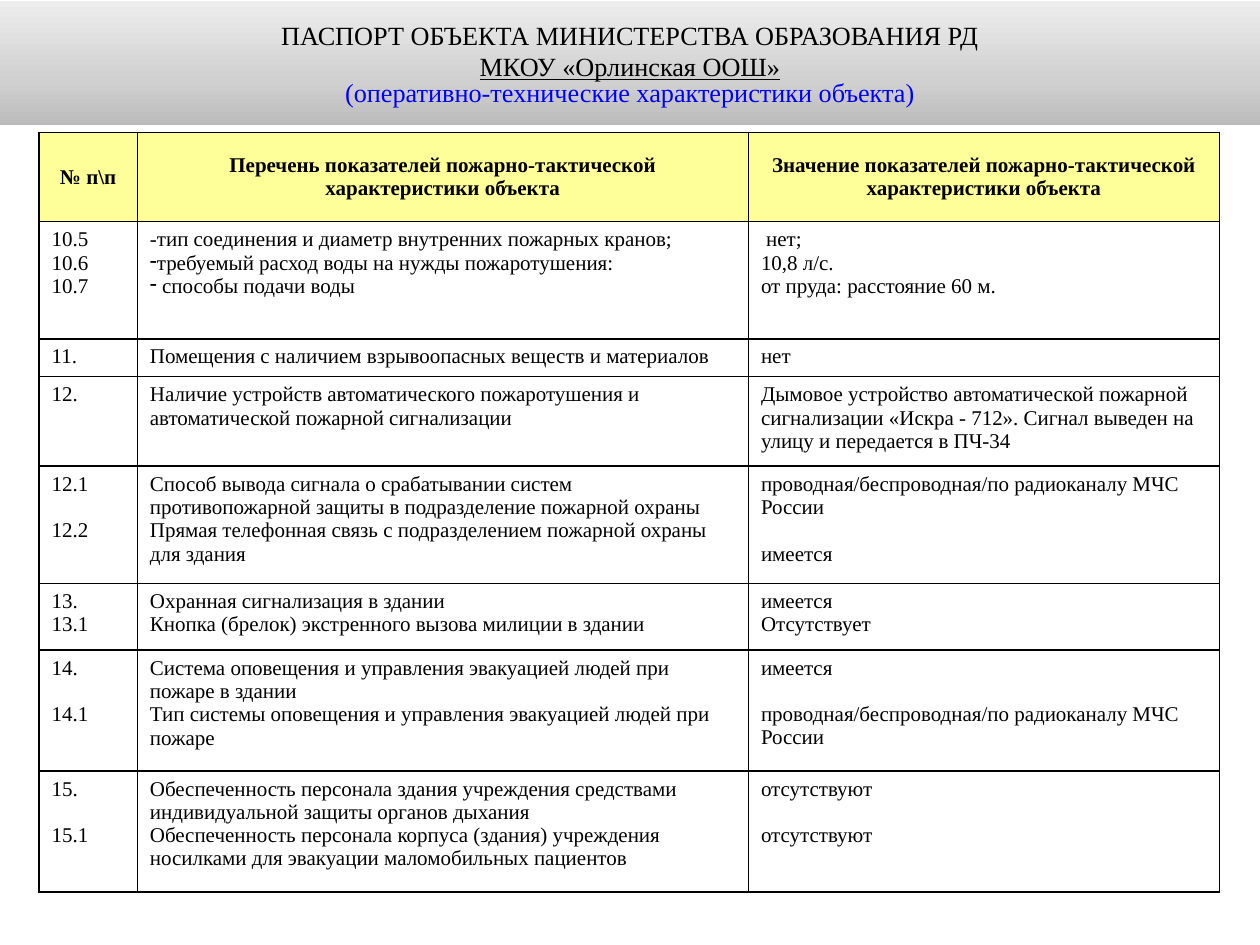
"""Build a slide with the fire-safety passport table of a school."""
from copy import deepcopy
from dataclasses import dataclass

from lxml import etree
from pptx import Presentation
from pptx.dml.color import RGBColor
from pptx.enum.shapes import MSO_SHAPE
from pptx.enum.text import MSO_ANCHOR, PP_ALIGN
from pptx.oxml.ns import qn
from pptx.util import Inches, Pt

RECT = MSO_SHAPE.RECTANGLE
MIDDLE, TOP = MSO_ANCHOR.MIDDLE, MSO_ANCHOR.TOP
CENTER, LEFT = PP_ALIGN.CENTER, PP_ALIGN.LEFT


@dataclass(frozen=True)
class Theme:
    font: str = "Times New Roman"
    title_size: float = 15
    table_size: float = 12
    line_gap: float = 13.3
    border_width: float = 1
    text: str = "000000"
    accent: str = "0000FF"
    header: str = "FFFF99"
    body: str = "FFFFFF"
    banner: tuple = ((0, "BCBCBC"), (0.35, "D0D0D0"), (1, "EDEDED"))


@dataclass(frozen=True)
class Line:
    text: str
    bullet: bool = False
    gap: bool = False


THEME = Theme()
COL_WIDTHS = (0.78, 4.85, 3.74)
ROW_HEIGHTS = (0.71, 0.93, 0.3, 0.71, 0.93, 0.53, 0.96, 0.96)
HEADER = (
    "№ п\\п",
    "Перечень показателей пожарно-тактической характеристики объекта",
    "Значение показателей пожарно-тактической характеристики объекта",
)
ROWS = (
    (("10.5", "10.6", "10.7"),
     ("-тип соединения и диаметр внутренних пожарных кранов;",
      Line("требуемый расход воды на нужды пожаротушения:", bullet=True),
      Line(" способы подачи воды", bullet=True)),
     (" нет;", "10,8 л/с.", "от пруда: расстояние 60 м.")),
    (("11.",),
     ("Помещения с наличием взрывоопасных веществ и материалов",),
     ("нет",)),
    (("12.",),
     ("Наличие устройств автоматического пожаротушения и автоматической пожарной сигнализации",),
     ("Дымовое устройство автоматической пожарной сигнализации «Искра - 712». "
      "Сигнал выведен на улицу и передается в ПЧ-34",)),
    (("12.1", Line("12.2", gap=True)),
     ("Способ вывода сигнала о срабатывании систем противопожарной защиты "
      "в подразделение пожарной охраны",
      "Прямая телефонная связь с подразделением пожарной охраны для здания"),
     ("проводная/беспроводная/по радиоканалу МЧС России", Line("имеется", gap=True))),
    (("13.", "13.1"),
     ("Охранная сигнализация в здании",
      "Кнопка (брелок) экстренного вызова милиции в здании"),
     ("имеется", "Отсутствует")),
    (("14.", Line("14.1", gap=True)),
     ("Система оповещения и управления эвакуацией людей при пожаре в здании",
      "Тип системы оповещения и управления эвакуацией людей при пожаре"),
     ("имеется", Line("проводная/беспроводная/по радиоканалу МЧС России", gap=True))),
    (("15.", Line("15.1", gap=True)),
     ("Обеспеченность персонала здания учреждения средствами индивидуальной защиты органов дыхания",
      "Обеспеченность персонала корпуса (здания) учреждения носилками "
      "для эвакуации маломобильных пациентов"),
     ("отсутствуют", Line("отсутствуют", gap=True))),
)


def rgb(value):
    """Return a colour from its hex value."""
    return RGBColor.from_string(value)


def add_paragraph(tf, index, text, size, align, color=THEME.text):
    """Write one styled paragraph into a text frame."""
    p = tf.paragraphs[0] if index == 0 else tf.add_paragraph()
    p.text = text
    p.alignment = align
    p.font.name = THEME.font
    p.font.size = Pt(size)
    p.font.color.rgb = rgb(color)
    return p


def add_bullet(p):
    """Give a paragraph a dash bullet."""
    etree.SubElement(p._p.get_or_add_pPr(), qn("a:buChar")).set("char", "-")


def set_borders(cell):
    """Draw all four borders of a cell."""
    tc_pr = cell._tc.get_or_add_tcPr()
    for i, side in enumerate(("lnL", "lnR", "lnT", "lnB")):
        ln = etree.Element(qn(f"a:{side}"), w=str(Pt(THEME.border_width)))
        fill = etree.SubElement(ln, qn("a:solidFill"))
        etree.SubElement(fill, qn("a:srgbClr")).set("val", THEME.text)
        tc_pr.insert(i, ln)


def fill_cell(cell, lines, header=False):
    """Fill a table cell with its lines, background and borders."""
    cell.fill.solid()
    cell.fill.fore_color.rgb = rgb(THEME.header if header else THEME.body)
    cell.vertical_anchor = MIDDLE if header else TOP
    cell.margin_left = cell.margin_right = Inches(0.1)
    cell.margin_top = cell.margin_bottom = Inches(0.05)
    for i, item in enumerate(lines):
        line = item if isinstance(item, Line) else Line(item)
        p = add_paragraph(cell.text_frame, i, line.text, THEME.table_size,
                          CENTER if header else LEFT)
        p.font.bold = header
        if line.gap:
            p.space_before = Pt(THEME.line_gap)
        if line.bullet:
            add_bullet(p)
    set_borders(cell)


def add_passport_table(s):
    """Add the table of indicators and their values."""
    table = s.shapes.add_table(
        len(ROW_HEIGHTS), len(COL_WIDTHS), Inches(0.31), Inches(1.05),
        Inches(sum(COL_WIDTHS)), Inches(sum(ROW_HEIGHTS))).table
    table.horz_banding = False
    for col, width in zip(table.columns, COL_WIDTHS):
        col.width = Inches(width)
    for row, height in zip(table.rows, ROW_HEIGHTS):
        row.height = Inches(height)
    for c, text in enumerate(HEADER):
        fill_cell(table.cell(0, c), (text,), header=True)
    for r, row in enumerate(ROWS, 1):
        for c, lines in enumerate(row):
            fill_cell(table.cell(r, c), lines)


def set_gradient(sp, stops):
    """Fill a shape with a gradient rising from the bottom."""
    sp.fill.gradient()
    sp.fill.gradient_angle = 90
    gs_list = sp._element.xpath(".//a:gsLst")[0]
    while len(gs_list) < len(stops):
        gs_list.append(deepcopy(gs_list[0]))
    for stop, (position, color) in zip(sp.fill.gradient_stops, stops):
        stop.position = position
        stop.color.rgb = rgb(color)


def add_banner(s):
    """Add the title banner."""
    sp = s.shapes.add_shape(RECT, 0, Inches(0.01), Inches(10), Inches(0.98))
    sp.shadow.inherit = False
    sp.line.fill.background()
    set_gradient(sp, THEME.banner)
    tf = sp.text_frame
    tf.word_wrap = True
    tf.vertical_anchor = MIDDLE
    tf.margin_left = tf.margin_right = Inches(0.09)
    tf.margin_top = tf.margin_bottom = Inches(0.05)
    size = THEME.title_size
    add_paragraph(tf, 0, "ПАСПОРТ ОБЪЕКТА МИНИСТЕРСТВА ОБРАЗОВАНИЯ РД", size, CENTER)
    school = add_paragraph(tf, 1, "МКОУ «Орлинская ООШ»", size, CENTER)
    school.font.underline = True
    subtitle = add_paragraph(tf, 2, "(оперативно-технические характеристики объекта)",
                             size, CENTER, THEME.accent)
    subtitle.line_spacing = 0.8


def main():
    """Build and save the presentation."""
    prs = Presentation()
    prs.slide_width, prs.slide_height = Inches(10), Inches(7.5)
    s = prs.slides.add_slide(prs.slide_layouts[6])
    add_passport_table(s)
    add_banner(s)
    prs.save("out.pptx")


if __name__ == "__main__":
    main()
